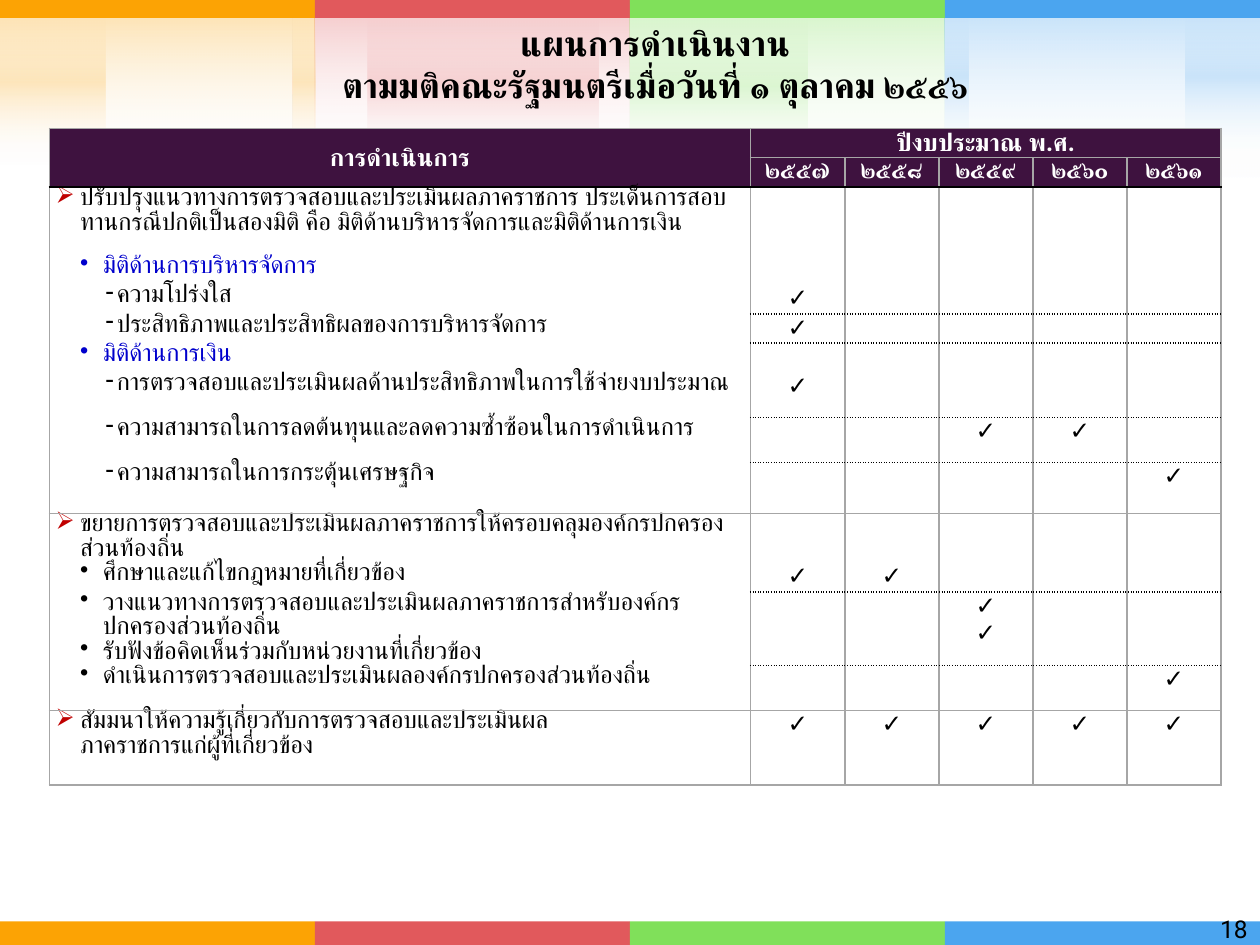
from lxml import etree
from pptx import Presentation
from pptx.dml import color
from pptx.enum import shapes, text
from pptx.oxml import ns
from pptx.util import Pt

C = {"orange": "FCA304", "red": "E1595C", "green": "80E05A", "blue": "4BA5EF",
     "head": "3E123F", "grid": "A6A6A6", "black": "000000", "white": "FFFFFF",
     "arrow": "C00000", "topic": "0000CC"}
CENTER = text.PP_ALIGN.CENTER


def sub(parent, tag, **attrs):
    return etree.SubElement(parent, ns.qn("a:" + tag), attrs)


class Slide:
    font, size = "Roboto", 14
    # bullet sign, left margin, hanging indent
    bullets = {"main": ("➢", 14, 14), "topic": ("•", 27, 13),
               "dot": ("•", 27, 13), "dash": ("-", 35, 6.5)}

    def __init__(self, prs):
        self.s = prs.slides.add_slide(prs.slide_layouts[6])

    def rect(self, x, y, w, h, fill):
        sp = self.s.shapes.add_shape(shapes.MSO_SHAPE.RECTANGLE, Pt(x), Pt(y), Pt(w), Pt(h))
        sp.shadow.inherit = False
        sp.line.fill.background()
        sp.fill.solid()
        sp.fill.fore_color.rgb = color.RGBColor.from_string(C[fill])
        return sp

    def glow(self, x, w, h, stops):
        """Rectangle with a vertical gradient; stops are (position, colour, opacity)."""
        spPr = self.rect(x, 0, w, h, "white")._element.spPr
        old = spPr.find(ns.qn("a:solidFill"))
        grad = etree.Element(ns.qn("a:gradFill"), rotWithShape="1")
        gs_list = sub(grad, "gsLst")
        for pos, name, alpha in stops:
            clr = sub(sub(gs_list, "gs", pos=str(pos * 1000)), "srgbClr", val=C[name])
            sub(clr, "alpha", val=str(alpha * 1000))
        sub(grad, "lin", ang="5400000", scaled="0")
        spPr.replace(old, grad)

    def add_text(self, p, words, size=size, font=font, fill="black", bold=False):
        for i, line in enumerate(words.split("\n")):
            if i:
                p.add_line_break()
            r = p.add_run()
            r.text = line
            r.font.size, r.font.name, r.font.bold = Pt(size), font, bold
            r.font.color.rgb = color.RGBColor.from_string(C[fill])
            sub(r._r.get_or_add_rPr(), "cs", typeface=font)

    def textbox(self, x, y, w, h, words, align, anchor, **style):
        tf = self.s.shapes.add_textbox(Pt(x), Pt(y), Pt(w), Pt(h)).text_frame
        tf.word_wrap, tf.vertical_anchor = True, anchor
        p = tf.paragraphs[0]
        p.alignment = align
        self.add_text(p, words, **style)

    def table(self, x, y, cols, rows):
        gf = self.s.shapes.add_table(len(rows), len(cols), Pt(x), Pt(y),
                                     Pt(sum(cols)), Pt(sum(rows)))
        t = gf.table
        t.first_row = t.horz_banding = False
        for i, w in enumerate(cols):
            t.columns[i].width = Pt(w)
        for i, h in enumerate(rows):
            t.rows[i].height = Pt(h)
        return t

    def cell(self, cell, top, bottom, fill=None):
        """Margins, borders and fill; top and bottom are (colour, dash) or None."""
        cell.margin_left = cell.margin_right = Pt(3.6)
        cell.margin_top = cell.margin_bottom = 0
        tcPr = cell._tc.get_or_add_tcPr()
        side = ("grid", "solid")
        for tag, edge in zip(("lnL", "lnR", "lnT", "lnB"), (side, side, top, bottom)):
            ln = sub(tcPr, tag, w="12700")
            if edge:
                sub(sub(ln, "solidFill"), "srgbClr", val=C[edge[0]])
                sub(ln, "prstDash", val=edge[1])
            else:
                sub(ln, "noFill")
        if fill:
            cell.fill.solid()
            cell.fill.fore_color.rgb = color.RGBColor.from_string(C[fill])
        else:
            cell.fill.background()

    def head(self, cell, words, spacing=1.0):
        cell.vertical_anchor = text.MSO_ANCHOR.MIDDLE
        p = cell.text_frame.paragraphs[0]
        p.alignment, p.line_spacing = CENTER, spacing
        self.add_text(p, words, fill="white", bold=True)

    def label(self, cell, kind, lines):
        sign, left, hang = self.bullets[kind]
        for i, words in enumerate(lines):
            p = cell.text_frame.add_paragraph() if i else cell.text_frame.paragraphs[0]
            p.line_spacing = Pt(14)
            pPr = p._p.get_or_add_pPr()
            pPr.set("marL", str(Pt(left)))
            pPr.set("indent", str(-Pt(hang)))
            if kind == "main":
                sub(sub(pPr, "buClr"), "srgbClr", val=C["arrow"])
            sub(pPr, "buChar", char=sign)
            self.add_text(p, words, fill="topic" if kind == "topic" else "black")

    def ticks(self, cell, count):
        for i in range(count):
            p = cell.text_frame.add_paragraph() if i else cell.text_frame.paragraphs[0]
            p.alignment = CENTER
            self.add_text(p, "✓", font="Arial", bold=True)
        if not count:
            sub(cell.text_frame.paragraphs[0]._p, "endParaRPr", sz="1000")


YEARS = ["๒๕๕๗", "๒๕๕๘", "๒๕๕๙", "๒๕๖๐", "๒๕๖๑"]
# height, bullet, lines, ticks per year, edge below the year cells
DOT, GRID = ("black", "sysDot"), ("grid", "solid")
PLAN = [
    (38.9, "main", ["ปรับปรุงแนวทางการตรวจสอบและประเมินผลภาคราชการ ประเด็นการสอบทานกรณีปกติเป็นสองมิติ "
                    "คือ มิติด้านบริหารจัดการและมิติด้านการเงิน"], (0, 0, 0, 0, 0), None),
    (16.6, "topic", ["มิติด้านการบริหารจัดการ"], (0, 0, 0, 0, 0), None),
    (16.6, "dash", ["ความโปร่งใส"], (1, 0, 0, 0, 0), DOT),
    (16.6, "dash", ["ประสิทธิภาพและประสิทธิผลของการบริหารจัดการ"], (1, 0, 0, 0, 0), DOT),
    (16.6, "topic", ["มิติด้านการเงิน"], (0, 0, 0, 0, 0), None),
    (25.8, "dash", ["การตรวจสอบและประเมินผลด้านประสิทธิภาพในการใช้จ่ายงบประมาณ"], (1, 0, 0, 0, 0), DOT),
    (25.8, "dash", ["ความสามารถในการลดต้นทุนและลดความซ้ำซ้อนในการดำเนินการ"], (0, 0, 1, 1, 0), DOT),
    (29, "dash", ["ความสามารถในการกระตุ้นเศรษฐกิจ"], (0, 0, 0, 0, 1), GRID),
    (28, "main", ["ขยายการตรวจสอบและประเมินผลภาคราชการให้ครอบคลุมองค์กรปกครองส่วนท้องถิ่น"],
     (0, 0, 0, 0, 0), None),
    (16.6, "dot", ["ศึกษาและแก้ไขกฎหมายที่เกี่ยวข้อง"], (1, 1, 0, 0, 0), DOT),
    (42, "dot", ["วางแนวทางการตรวจสอบและประเมินผลภาคราชการสำหรับองค์กรปกครองส่วนท้องถิ่น",
                 "รับฟังข้อคิดเห็นร่วมกับหน่วยงานที่เกี่ยวข้อง"], (0, 0, 2, 0, 0), DOT),
    (25.8, "dot", ["ดำเนินการตรวจสอบและประเมินผลองค์กรปกครองส่วนท้องถิ่น"], (0, 0, 0, 0, 1), GRID),
    (42.5, "main", ["สัมมนาให้ความรู้เกี่ยวกับการตรวจสอบและประเมินผล\nภาคราชการแก่ผู้ที่เกี่ยวข้อง"],
     (1, 1, 1, 1, 1), GRID),
]


def main():
    prs = Presentation()
    prs.slide_width, prs.slide_height = Pt(720), Pt(540)
    s = Slide(prs)

    # Soft glow under the top band: colour, height, inner strips (x, width, height)
    glows = [("red", 94.3, [(210.2, 131.8, 94.3)]), ("green", 98.6, [(360, 101.5, 98.6)]),
             ("blue", 103, [(540, 13.7, 87.8), (677.5, 42.5, 87.8)]),
             ("orange", 94.3, [(167, 13, 94.3), (0, 60.5, 94.3)])]
    bands = ["orange", "red", "green", "blue"]
    for name, h, strips in glows:
        fade = [(0, name, 20), (100, "white", 0)]
        pulse = [(0, "white", 0), (50, name, 20), (100, "white", 0)]
        x = 180 * bands.index(name)
        s.glow(x, 180, h, fade)
        for strip in strips:
            s.glow(*strip, pulse)
        s.glow(x, 180, h, fade)

    # Colour bands at top and bottom
    for y, h in ((0, 10.2), (526.5, 13.5)):
        for i, name in enumerate(bands):
            s.rect(180 * i, y, 180, h, name)

    # Title
    s.textbox(54, 11.5, 640.8, 49, "แผนการดำเนินงาน\nตามมติคณะรัฐมนตรีเมื่อวันที่ ๑ ตุลาคม ๒๕๕๖",
              CENTER, text.MSO_ANCHOR.MIDDLE, size=20, bold=True)

    # Table header
    t = s.table(28.2, 73.3, [400.8] + [53.75] * 5, [16.6, 14] + [row[0] for row in PLAN])
    black = ("black", "solid")
    for r in range(2):
        for c in range(6):
            s.cell(t.cell(r, c), GRID, black if r else GRID, "head")
    t.cell(0, 0).merge(t.cell(1, 0))
    t.cell(0, 1).merge(t.cell(0, 5))
    s.head(t.cell(0, 0), "การดำเนินการ")
    s.head(t.cell(0, 1), "ปีงบประมาณ พ.ศ.")
    for c, year in enumerate(YEARS, 1):
        s.head(t.cell(1, c), year, Pt(14))

    # Plan rows: the label column is ruled only between groups
    above = black
    for r, (_, kind, lines, marks, below) in enumerate(PLAN, 2):
        s.cell(t.cell(r, 0), None if above == DOT else above, None if below == DOT else below)
        s.label(t.cell(r, 0), kind, lines)
        for c, count in enumerate(marks, 1):
            s.cell(t.cell(r, c), above, below)
            s.ticks(t.cell(r, c), count)
        above = below

    # Page number
    s.textbox(632.2, 519, 87.8, 31.7, "18", text.PP_ALIGN.RIGHT, text.MSO_ANCHOR.TOP)

    prs.save("out.pptx")


if __name__ == "__main__":
    main()
